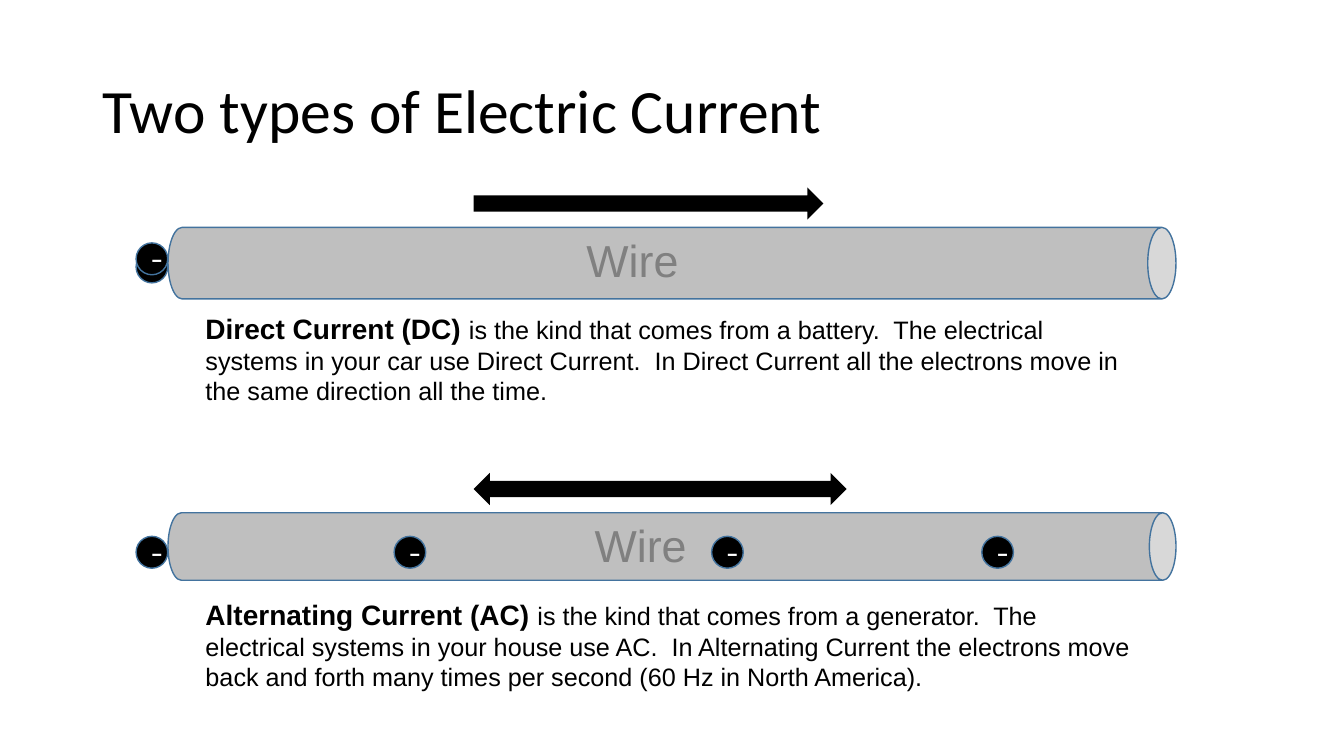
from dataclasses import dataclass

from pptx import Presentation
from pptx.dml.color import RGBColor
from pptx.enum import shapes, text
from pptx.util import Pt


@dataclass(frozen=True)
class Theme:
    """Colours, fonts and type sizes of the slide."""
    black: str = "000000"
    white: str = "FFFFFF"
    wire: str = "BFBFBF"
    edge: str = "43739E"
    label: str = "808080"
    head: str = "Calibri"
    body: str = "Arial"
    title: int = 44
    name: int = 32
    term: int = 20
    text: int = 18


THEME = Theme()
KIND = shapes.MSO_SHAPE


def style(run, size, color, font, bold=False):
    """Set the font of one run."""
    run.font.size = Pt(size)
    run.font.color.rgb = RGBColor.from_string(color)
    run.font.name = font
    run.font.bold = bold


def add_text(slide, box, wrap=True):
    """Add an empty text box and return its text frame."""
    frame = slide.shapes.add_textbox(*map(Pt, box)).text_frame
    frame.word_wrap = wrap
    return frame


def add_form(slide, kind, box, fill, edge=None):
    """Add a flat preset shape, outlined when an edge colour is given."""
    form = slide.shapes.add_shape(kind, *map(Pt, box))
    form.shadow.inherit = False
    form.fill.solid()
    form.fill.fore_color.rgb = RGBColor.from_string(fill)
    if edge:
        form.line.color.rgb = RGBColor.from_string(edge)
        form.line.width = Pt(1)
    else:
        form.line.fill.background()
    return form


def add_title(slide, box, words):
    """Place the slide title, centred vertically in its box."""
    frame = add_text(slide, box)
    frame.vertical_anchor = text.MSO_ANCHOR.MIDDLE
    para = frame.paragraphs[0]
    para.text = words
    para.line_spacing = 0.9
    style(para.runs[0], THEME.title, THEME.black, THEME.head)


def add_wire(slide, box):
    """Lay a can on its side so that it fills the box."""
    left, top, width, height = box
    shift = (width - height) / 2
    can = add_form(slide, KIND.CAN, (left + shift, top - shift, height, width),
                   THEME.wire, THEME.edge)
    can.adjustments[0] = 0.395
    can.rotation = 90


def add_charge(slide, left, top):
    """Place one electron with its minus sign."""
    ball = add_form(slide, KIND.OVAL, (left, top, 22.6, 22.8), THEME.black, THEME.edge)
    frame = ball.text_frame
    frame.text = "–"
    frame.vertical_anchor = text.MSO_ANCHOR.MIDDLE
    para = frame.paragraphs[0]
    para.alignment = text.PP_ALIGN.CENTER
    style(para.runs[0], THEME.text, THEME.white, THEME.head, True)


def add_note(slide, box, term, words):
    """Write a bold term followed by its explanation."""
    frame = add_text(slide, box)
    frame.auto_size = text.MSO_AUTO_SIZE.SHAPE_TO_FIT_TEXT
    para = frame.paragraphs[0]
    para.text = term
    style(para.runs[0], THEME.term, THEME.black, THEME.body, True)
    rest = para.add_run()
    rest.text = words
    style(rest, THEME.text, THEME.black, THEME.body)


def add_label(slide, box):
    """Name the wire."""
    frame = add_text(slide, box, wrap=False)
    frame.auto_size = text.MSO_AUTO_SIZE.SHAPE_TO_FIT_TEXT
    frame.text = "Wire"
    style(frame.paragraphs[0].runs[0], THEME.name, THEME.label, THEME.body)


def add_current(slide, box, depth, charges, arrow, span, label, term, words):
    """Draw one type of current: wire, electrons, note, label and arrow."""
    left, top, width, _ = box
    add_wire(slide, (left, top + 28.5, width, depth))
    for x, y in charges:
        add_charge(slide, left + x, top + y)
    add_note(slide, (left + 19.7, top + 85.3, 680.4, 75), term, words)
    add_label(slide, (left + label, top + 28.4, 80.6, 46))
    add_form(slide, arrow, (left + 218.4, top, span, 23), THEME.black)


def main():
    """Build and save the slide."""
    deck = Presentation()
    deck.slide_width, deck.slide_height = Pt(960), Pt(540)
    slide = deck.slides.add_slide(deck.slide_layouts[6])
    add_title(slide, (66, 28.8, 828, 104.4), "Two types of Electric Current")
    add_current(
        slide, (120, 133.9, 720, 160), 51.1, [(-22.8, 45.4), (-22.8, 39.6)],
        KIND.RIGHT_ARROW, 249.8, 291.8, "Direct Current (DC) ",
        "is the kind that comes from a battery.  The electrical systems in your "
        "car use Direct Current.  In Direct Current all the electrons move in the "
        "same direction all the time.")
    add_current(
        slide, (120, 337.8, 720, 160), 48.2,
        [(x, 45.3) for x in (161.5, 388.3, 581.3, -22.8)],
        KIND.LEFT_RIGHT_ARROW, 266.4, 297.6, "Alternating Current (AC) ",
        "is the kind that comes from a generator.  The electrical systems in your "
        "house use AC.  In Alternating Current the electrons move back and forth "
        "many times per second (60 Hz in North America).")
    deck.save("out.pptx")


if __name__ == "__main__":
    main()
